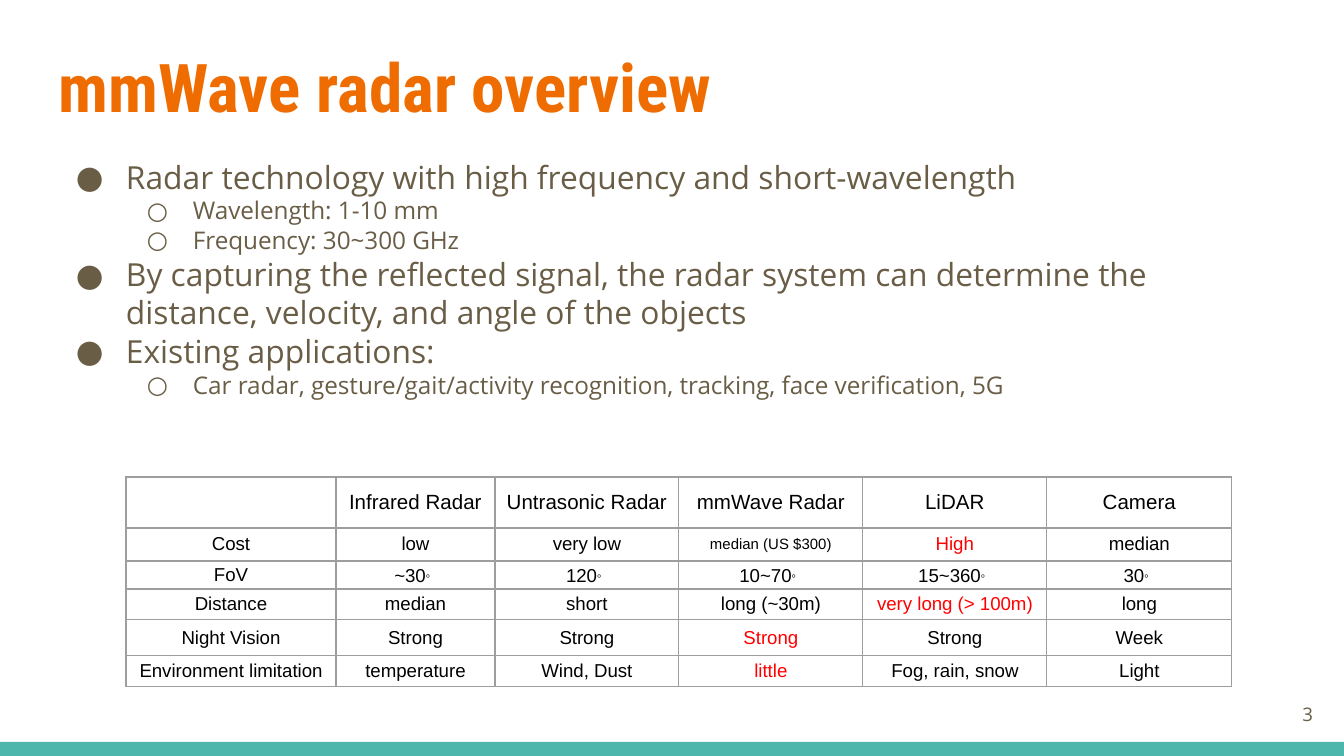
from dataclasses import dataclass
from typing import NamedTuple

import lxml.etree
import pptx
import pptx.dml.color
import pptx.enum.shapes
import pptx.enum.text
import pptx.oxml.ns
import pptx.util

SCALE = 914400 / 134.4
ALIGN = pptx.enum.text.PP_ALIGN
ANCHOR = pptx.enum.text.MSO_ANCHOR


@dataclass(frozen=True)
class Theme:
    orange: str = "EF6C00"
    brown: str = "695D46"
    teal: str = "4DB6AC"
    black: str = "000000"
    red: str = "FF0000"
    grid: str = "9E9E9E"
    head: str = "Roboto Condensed"
    body: str = "Open Sans"
    plain: str = "Arial"
    title: int = 36
    large: int = 17
    small: int = 13
    top: int = 11
    cell: int = 10
    note: int = 8


class Box(NamedTuple):
    left: int
    top: int
    width: int
    height: int


class Level(NamedTuple):
    mark: str
    size: int
    left: int
    hang: int


class Point(NamedTuple):
    text: str
    level: int = 0


class Cell(NamedTuple):
    text: str
    color: str = Theme.black
    size: int = Theme.cell
    degree: bool = False


THEME = Theme()
LEVELS = (Level("●", THEME.large, 67, 50), Level("○", THEME.small, 134, 46))
POINTS = (
    Point("Radar technology with high frequency and short-wavelength"),
    Point("Wavelength: 1-10 mm", 1),
    Point("Frequency: 30~300 GHz", 1),
    Point("By capturing the reflected signal, the radar system can determine "
          "the distance, velocity, and angle of the objects"),
    Point("Existing applications:"),
    Point("Car radar, gesture/gait/activity recognition, tracking, "
          "face verification, 5G", 1),
)


def row(*texts: str, hot: int = -1) -> list[Cell]:
    return [Cell(text, THEME.red if i == hot else THEME.black)
            for i, text in enumerate(texts)]


HEADS = ("", "Infrared Radar", "Untrasonic Radar", "mmWave Radar", "LiDAR", "Camera")
ANGLES = ("~30", "120", "10~70", "15~360", "30")
COST = row("Cost", "low", "very low", "median (US $300)", "High", "median", hot=4)
COST[3] = COST[3]._replace(size=THEME.note)
ROWS = (
    [Cell(text, size=THEME.top) for text in HEADS],
    COST,
    [Cell("FoV"), *(Cell(text, degree=True) for text in ANGLES)],
    row("Distance", "median", "short", "long (~30m)", "very long (> 100m)", "long", hot=4),
    row("Night Vision", "Strong", "Strong", "Strong", "Strong", "Week", hot=3),
    row("Environment limitation", "temperature", "Wind, Dust", "little",
        "Fog, rain, snow", "Light", hot=3),
)
WIDTHS = (210, 159, 184, 184, 184, 185)
HEIGHTS = (51, 33, 28, 31, 36, 31)


def px(count: int) -> int:
    return round(count * SCALE)


def place(box: Box) -> tuple[int, ...]:
    return tuple(px(side) for side in box)


def hue(code: str) -> pptx.dml.color.RGBColor:
    return pptx.dml.color.RGBColor.from_string(code)


def add(parent, tag: str, **attrs: str):
    return lxml.etree.SubElement(parent, pptx.oxml.ns.qn(tag), attrs)


def write(para, text: str, *, font: str, size: int, color: str,
          bold: bool = False, align=ALIGN.LEFT, raised: bool = False) -> None:
    para.alignment = align
    run = para.add_run()
    run.text = text
    run.font.name = font
    run.font.size = pptx.util.Pt(size)
    run.font.bold = bold
    run.font.color.rgb = hue(color)
    if raised:
        run.font._element.set("baseline", "30000")


def frame(slide, box: Box, anchor=ANCHOR.TOP, inset: int = 13):
    area = slide.shapes.add_textbox(*place(box)).text_frame
    area.word_wrap = True
    area.vertical_anchor = anchor
    area.margin_left = area.margin_right = area.margin_bottom = px(13)
    area.margin_top = px(inset)
    return area


def listing(slide, box: Box, points: tuple[Point, ...]) -> None:
    area = frame(slide, box, inset=16)
    for i, point in enumerate(points):
        para = area.add_paragraph() if i else area.paragraphs[0]
        level = LEVELS[point.level]
        para.level = point.level
        para.line_spacing = 1.01
        write(para, point.text, font=THEME.body, size=level.size, color=THEME.brown)
        props = para._p.get_or_add_pPr()
        props.set("marL", str(px(level.left)))
        props.set("indent", str(-px(level.hang)))
        add(add(props, "a:buClr"), "a:srgbClr", val=THEME.brown)
        add(props, "a:buFont", typeface=THEME.body)
        add(props, "a:buChar", char=level.mark)


def border(cell) -> None:
    props = cell._tc.get_or_add_tcPr()
    for side in ("L", "R", "T", "B"):
        line = add(props, f"a:ln{side}", w=str(pptx.util.Pt(0.75)))
        add(add(line, "a:solidFill"), "a:srgbClr", val=THEME.grid)


def fill(cell, data: Cell) -> None:
    cell.margin_left = cell.margin_right = cell.margin_top = cell.margin_bottom = 0
    cell.vertical_anchor = ANCHOR.MIDDLE
    border(cell)
    cell.fill.background()
    para = cell.text_frame.paragraphs[0]
    style = dict(font=THEME.plain, size=data.size, color=data.color, align=ALIGN.CENTER)
    if data.text:
        write(para, data.text, **style)
    if data.degree:
        write(para, "。", raised=True, **style)


def grid(slide, left: int, top: int) -> None:
    box = Box(left, top, sum(WIDTHS), sum(HEIGHTS))
    table = slide.shapes.add_table(len(ROWS), len(WIDTHS), *place(box)).table
    table.first_row = table.horz_banding = False
    for column, width in zip(table.columns, WIDTHS):
        column.width = px(width)
    for line, height, cells in zip(table.rows, HEIGHTS, ROWS):
        line.height = px(height)
        for cell, data in zip(line.cells, cells):
            fill(cell, data)


def band(slide, box: Box) -> None:
    shape = slide.shapes.add_shape(pptx.enum.shapes.MSO_SHAPE.RECTANGLE, *place(box))
    shape.shadow.inherit = False
    shape.fill.solid()
    shape.fill.fore_color.rgb = hue(THEME.teal)
    shape.line.fill.background()


def main() -> None:
    deck = pptx.Presentation()
    deck.slide_width, deck.slide_height = px(1344), px(756)
    slide = deck.slides.add_slide(deck.slide_layouts[6])
    band(slide, Box(0, 742, 1344, 14))
    title = frame(slide, Box(46, 32, 1253, 103))
    write(title.paragraphs[0], "mmWave radar overview", font=THEME.head,
          size=THEME.title, color=THEME.orange, bold=True)
    listing(slide, Box(46, 141, 1253, 485), POINTS)
    grid(slide, 126, 477)
    number = frame(slide, Box(1246, 685, 80, 58), ANCHOR.MIDDLE)
    write(number.paragraphs[0], "3", font=THEME.body, size=THEME.cell,
          color=THEME.brown, align=ALIGN.RIGHT)
    deck.save("out.pptx")


if __name__ == "__main__":
    main()
